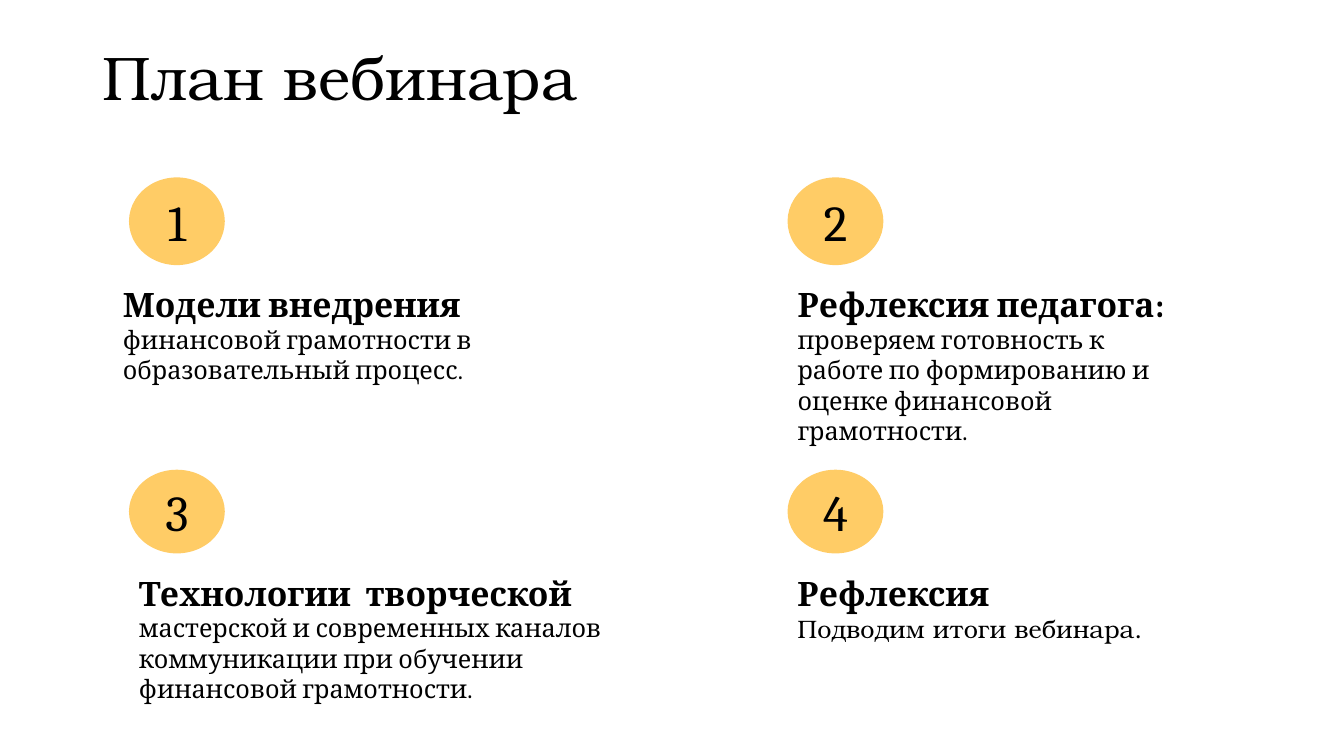
from pptx import Presentation
from pptx.dml.color import RGBColor
from pptx.enum.shapes import MSO_SHAPE
from pptx.enum.text import MSO_ANCHOR, MSO_AUTO_SIZE, PP_ALIGN
from pptx.util import Inches, Pt

OVAL = MSO_SHAPE.OVAL
TOP, MIDDLE = MSO_ANCHOR.TOP, MSO_ANCHOR.MIDDLE
LEFT, CENTER = PP_ALIGN.LEFT, PP_ALIGN.CENTER
FIXED_SIZE = MSO_AUTO_SIZE.NONE

BLACK = RGBColor(0x00, 0x00, 0x00)
WHITE = RGBColor(0xFF, 0xFF, 0xFF)
AMBER = RGBColor(0xFF, 0xCC, 0x66)
SERIF = "Cambria"
DISPLAY = "TeX Gyre Bonum"
TITLE_ONLY = 5


class PlanSlide:
    def __init__(self, deck):
        self.column = deck.slide_width / 100
        self.row = deck.slide_height / 100
        self.slide = deck.slides.add_slide(deck.slide_layouts[TITLE_ONLY])
        self.slide.background.fill.solid()
        self.slide.background.fill.fore_color.rgb = WHITE

    def box(self, left, top, width, height):
        return (round(left * self.column), round(top * self.row),
                round(width * self.column), round(height * self.row))

    def add_text(self, paragraph, text, size, font=SERIF, bold=False, align=LEFT):
        paragraph.alignment = align
        run = paragraph.add_run()
        run.text = text
        run.font.name = font
        run.font.size = Pt(size)
        run.font.bold = bold
        run.font.color.rgb = BLACK

    def title(self, text, *area):
        heading = self.slide.shapes.title
        heading.left, heading.top, heading.width, heading.height = self.box(*area)
        frame = heading.text_frame
        frame.auto_size = FIXED_SIZE
        frame.vertical_anchor = TOP
        frame.margin_top = Inches(0.07)
        frame.paragraphs[0].line_spacing = 0.9
        self.add_text(frame.paragraphs[0], text, 44, DISPLAY)

    def badge(self, number, *area):
        circle = self.slide.shapes.add_shape(OVAL, *self.box(*area))
        circle.shadow.inherit = False
        circle.fill.solid()
        circle.fill.fore_color.rgb = AMBER
        circle.line.fill.background()
        circle.text_frame.vertical_anchor = MIDDLE
        self.add_text(circle.text_frame.paragraphs[0], str(number), 36, align=CENTER)

    def topic(self, heading, detail, detail_font, *area):
        frame = self.slide.shapes.add_textbox(*self.box(*area)).text_frame
        frame.word_wrap = True
        frame.auto_size = FIXED_SIZE
        self.add_text(frame.paragraphs[0], heading, 24, bold=True)
        self.add_text(frame.add_paragraph(), detail, 18, detail_font)


COLUMNS = (9.6, 58.6)
ROWS = ((23.47, 11.6, 36.93), (62.13, 11.07, 75.07))
BADGE_WIDTH = 7.13
TOPICS = (
    ("Модели внедрения",
     "финансовой грамотности в образовательный процесс.",
     SERIF, -1.2, 42.84, 24.27),
    ("Рефлексия педагога:",
     "проверяем готовность к работе по формированию и оценке финансовой грамотности.",
     SERIF, 0, 30, 22.93),
    ("Технологии  творческой",
     "мастерской и современных каналов коммуникации при обучении финансовой грамотности.",
     SERIF, 0, 41.71, 22.93),
    ("Рефлексия",
     "Подводим итоги вебинара.",
     DISPLAY, 0, 31.88, 14.8),
)


def main():
    deck = Presentation()
    deck.slide_width, deck.slide_height = Inches(13.33), Inches(7.5)
    plan = PlanSlide(deck)
    plan.title("План вебинара", 6.9, 5.33, 86.27, 19.33)
    for index, (heading, detail, font, shift, width, height) in enumerate(TOPICS):
        left = COLUMNS[index % 2]
        badge_top, badge_height, topic_top = ROWS[index // 2]
        plan.badge(index + 1, left, badge_top, BADGE_WIDTH, badge_height)
        plan.topic(heading, detail, font, left + shift, topic_top, width, height)
    deck.save("out.pptx")


if __name__ == "__main__":
    main()
